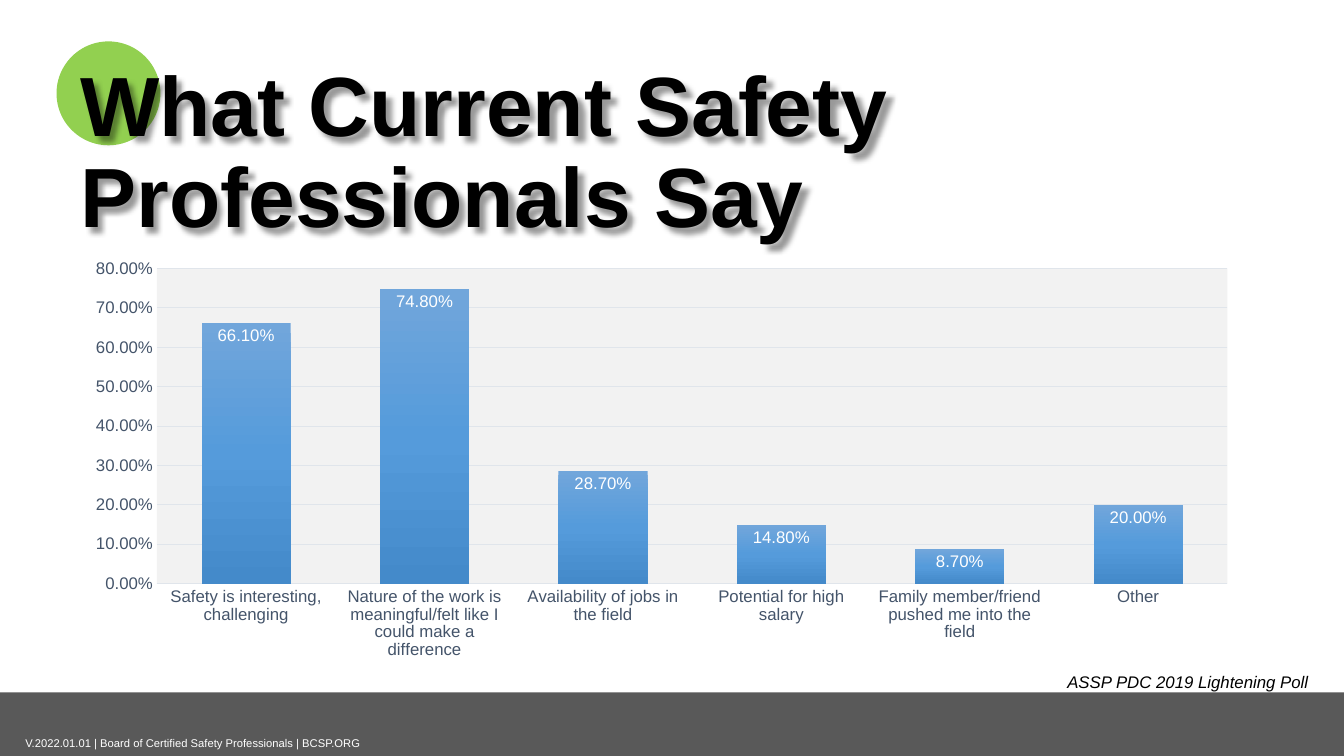
"""Build the slide charting why current safety professionals chose their field."""
from pptx import Presentation
from pptx.chart.data import CategoryChartData
from pptx.dml.color import RGBColor
from pptx.enum.chart import XL_CHART_TYPE as ChartType, XL_LABEL_POSITION as LabelPosition
from pptx.enum.chart import XL_TICK_MARK as TickMark
from pptx.enum.shapes import MSO_SHAPE as Shape
from pptx.enum.text import MSO_ANCHOR as Anchor
from pptx.oxml import parse_xml
from pptx.util import Pt

NAMESPACES = ('xmlns:a="http://schemas.openxmlformats.org/drawingml/2006/main" '
              'xmlns:c="http://schemas.openxmlformats.org/drawingml/2006/chart"')


def color(value):
    return RGBColor.from_string(value)


def set_font(font, size, value):
    font.name = "Arial"
    font.size = Pt(size)
    font.color.rgb = color(value)


deck = Presentation()
deck.slide_width, deck.slide_height = Pt(960), Pt(540)
page = deck.slides.add_slide(deck.slide_layouts[6])

for preset, left, top, width, height, fill in [
    (Shape.RECTANGLE, 0, 494.6, 960, 45.4, "595959"),
    (Shape.OVAL, 40.4, 29.6, 74.2, 74.2, "92D050"),
]:
    shape = page.shapes.add_shape(preset, Pt(left), Pt(top), Pt(width), Pt(height))
    shape.shadow.inherit = False
    shape.fill.solid()
    shape.fill.fore_color.rgb = color(fill)
    shape.line.fill.background()

answers = {
    "Safety is interesting, challenging": 0.661,
    "Nature of the work is meaningful/felt like I could make a difference": 0.748,
    "Availability of jobs in the field": 0.287,
    "Potential for high salary": 0.148,
    "Family member/friend pushed me into the field": 0.087,
    "Other": 0.2,
}
data = CategoryChartData(number_format="0.00%")
data.categories = list(answers)
data.add_series("Series 1", list(answers.values()))
chart = page.shapes.add_chart(ChartType.COLUMN_CLUSTERED, Pt(58.6), Pt(185.5),
                              Pt(836.6), Pt(290.9), data).chart
chart.has_legend = False
chart.has_title = False
set_font(chart.font, 10, "000000")

for axis in (chart.category_axis, chart.value_axis):
    axis.major_tick_mark = axis.minor_tick_mark = TickMark.NONE
    set_font(axis.tick_labels.font, 12, "44546A")
category_axis, value_axis = chart.category_axis, chart.value_axis
value_axis.minimum_scale, value_axis.maximum_scale = 0, 0.8
value_axis.major_unit = 0.1
value_axis.tick_labels.number_format = "0.00%"
value_axis.tick_labels.number_format_is_linked = False
value_axis.format.line.fill.background()
for line in (category_axis.format.line, value_axis.major_gridlines.format.line):
    line.color.rgb = color("E0E5EB")
    line.width = Pt(0.75)

plot = chart.plots[0]
plot.gap_width, plot.overlap = 100, -24
plot.vary_by_categories = False
plot.has_data_labels = True
labels = plot.data_labels
labels.show_value = True
labels.position = LabelPosition.INSIDE_END
labels.number_format = "0.00%"
labels.number_format_is_linked = False
set_font(labels.font, 12, "FFFFFF")

stops = "".join(f'<a:gs pos="{place}"><a:srgbClr val="{value}"/></a:gs>'
                for place, value in [(0, "71A6DB"), (50000, "559BDB"), (100000, "448ACA")])
bar_properties = plot.series[0]._element.get_or_add_spPr()
bar_properties.insert(0, parse_xml(
    f'<a:gradFill {NAMESPACES}><a:gsLst>{stops}</a:gsLst><a:lin ang="5400000"/></a:gradFill>'))

plot_area = chart._chartSpace.chart.plotArea
for layout in plot_area.xpath("c:layout"):
    plot_area.remove(layout)
frame = "".join(f'<c:{name} val="{value}"/>' for name, value in [
    ("layoutTarget", "inner"), ("xMode", "edge"), ("yMode", "edge"),
    ("x", 0.064), ("y", 0.019), ("w", 0.914), ("h", 0.776)])
plot_area.insert(0, parse_xml(
    f"<c:layout {NAMESPACES}><c:manualLayout>{frame}</c:manualLayout></c:layout>"))
plot_area.append(parse_xml(
    f'<c:spPr {NAMESPACES}><a:solidFill><a:srgbClr val="F2F2F2"/></a:solidFill></c:spPr>'))

for text, left, top, width, height, size, value, anchor in [
    ("V.2022.01.01 | Board of Certified Safety Professionals | BCSP.ORG",
     11, 522.5, 273.6, 17, 8, "FFFFFF", Anchor.MIDDLE),
    ("ASSP PDC 2019 Lightening Poll",
     755.3, 475.9, 200, 21.8, 12, "000000", Anchor.TOP),
    ("What Current Safety Professionals Say",
     50.4, 42.2, 849.6, 79.9, 60, "000000", Anchor.TOP),
]:
    box = page.shapes.add_textbox(Pt(left), Pt(top), Pt(width), Pt(height))
    box.text_frame.word_wrap = True
    box.text_frame.vertical_anchor = anchor
    para = box.text_frame.paragraphs[0]
    span = para.add_run()
    span.text = text
    set_font(span.font, size, value)
    span.font.italic = size == 12
    span.font.bold = size == 60

title, title_para = box, para
title_para.line_spacing = 0.9
title._element.spPr.append(parse_xml(
    f'<a:effectLst {NAMESPACES}><a:outerShdw blurRad="50800" dist="63500" dir="2700000">'
    '<a:srgbClr val="000000"><a:alpha val="40000"/></a:srgbClr></a:outerShdw></a:effectLst>'))

deck.save("out.pptx")
